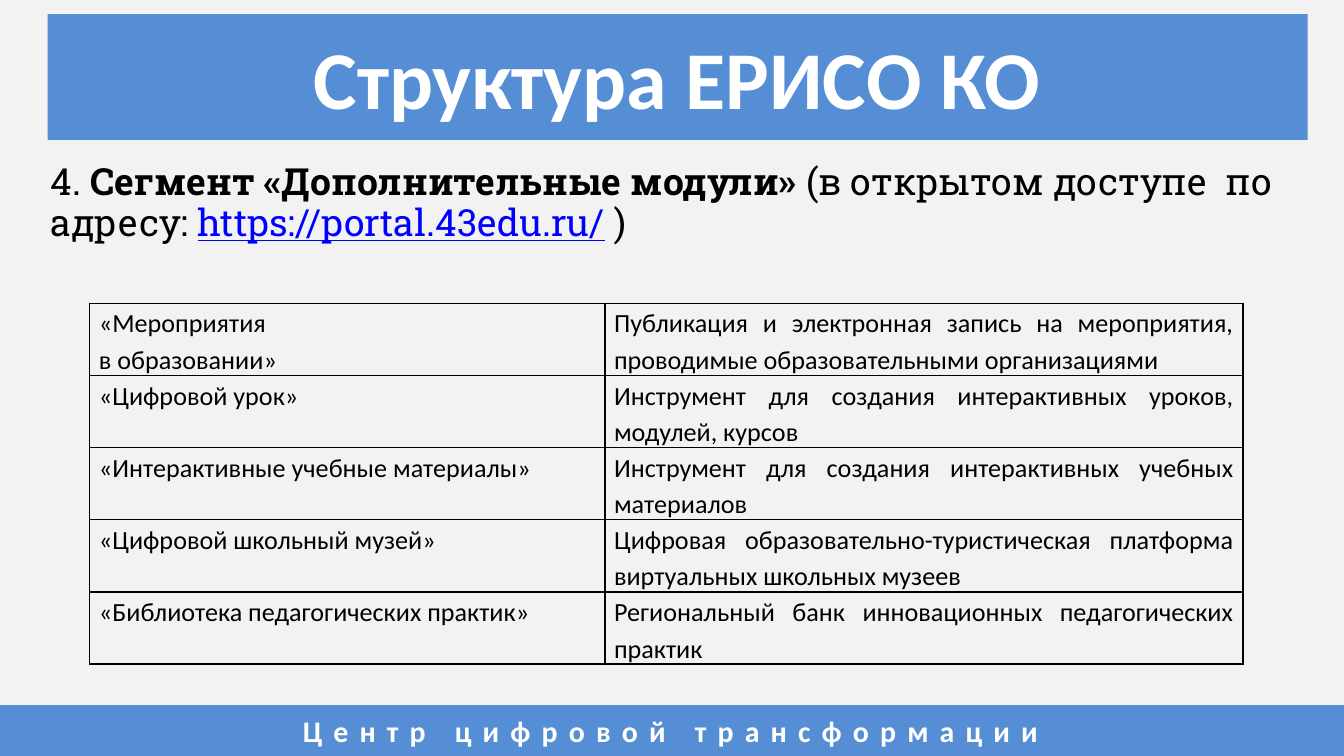
from lxml import etree
from pptx import Presentation
from pptx import util as u
from pptx.dml.color import RGBColor
from pptx.enum import shapes, text
from pptx.oxml.ns import qn

Pt = u.Pt
HUES = {"back": "F2F2F2", "band": "558ED5", "white": "FFFFFF", "ink": "000000", "link": "0000FF"}
ROWS = [
    (["«Мероприятия ", "в образовании»"],
     ["Публикация и электронная запись на мероприятия, проводимые образовательными организациями"]),
    (["«Цифровой урок»"],
     ["Инструмент для создания интерактивных уроков, модулей, курсов"]),
    (["«Интерактивные учебные материалы»"],
     ["Инструмент для создания интерактивных учебных материалов"]),
    (["«Цифровой школьный музей»"],
     ["Цифровая образовательно-туристическая платформа виртуальных школьных музеев"]),
    (["«Библиотека педагогических практик»"],
     ["Региональный банк инновационных педагогических практик"]),
]


def hue(name):
    """Return the named colour."""
    return RGBColor.from_string(HUES[name])


def paint(fill, name):
    """Give a fill one solid colour."""
    fill.solid()
    fill.fore_color.rgb = hue(name)


def add_run(para, words, size, color="ink", face="Calibri", bold=False, under=False):
    """Add one formatted run to a paragraph."""
    run = para.add_run()
    run.text = words
    font = run.font
    font.size, font.name, font.bold, font.underline = Pt(size), face, bold, under
    font.color.rgb = hue(color)
    return run


def add_foot(slide, x, y, w, h):
    """Draw the footer band with its spaced caption."""
    band = slide.shapes.add_shape(shapes.MSO_SHAPE.RECTANGLE, Pt(x), Pt(y), Pt(w), Pt(h))
    band.shadow.inherit = False
    paint(band.fill, "band")
    band.line.color.rgb = hue("band")
    band.line.width = Pt(0.75)
    frame = band.text_frame
    frame.vertical_anchor = text.MSO_ANCHOR.MIDDLE
    para = frame.paragraphs[0]
    para.alignment = text.PP_ALIGN.CENTER
    run = add_run(para, "Центр цифровой трансформации", 16, "white", bold=True)
    run.font._element.set("spc", "600")


def add_title(slide, x, y, w, h):
    """Place and format the title placeholder."""
    title = slide.shapes.title
    title.left, title.top, title.width, title.height = Pt(x), Pt(y), Pt(w), Pt(h)
    paint(title.fill, "band")
    frame = title.text_frame
    frame.vertical_anchor = text.MSO_ANCHOR.MIDDLE
    para = frame.paragraphs[0]
    para.alignment = text.PP_ALIGN.CENTER
    add_run(para, "Структура ЕРИСО КО", 44, "white", bold=True)


def add_lead(slide, x, y, w, h):
    """Write the lead paragraph with the portal address."""
    frame = slide.shapes.add_textbox(Pt(x), Pt(y), Pt(w), Pt(h)).text_frame
    frame.word_wrap = True
    para = frame.paragraphs[0]
    para.line_spacing = 0.92
    face = "Roboto Slab"
    add_run(para, "4. ", 20, face=face)
    add_run(para, "Сегмент «Дополнительные модули» ", 20, face=face, bold=True)
    add_run(para, "(в открытом доступе  по адресу: ", 20, face=face)
    add_run(para, "https://portal.43edu.ru/", 20, "link", face, under=True)
    add_run(para, " )", 20, face=face)


def edge(cell):
    """Rule all four sides of a cell."""
    props = cell._tc.get_or_add_tcPr()
    for spot, side in enumerate(("lnL", "lnR", "lnT", "lnB")):
        line = etree.Element(qn("a:" + side), w=str(Pt(1)))
        fill = etree.SubElement(line, qn("a:solidFill"))
        etree.SubElement(fill, qn("a:srgbClr"), val=HUES["ink"])
        props.insert(spot, line)


def fill_cell(cell, lines):
    """Write justified lines into a ruled, clear cell."""
    cell.fill.background()
    cell.margin_left = cell.margin_right = Pt(5)
    cell.margin_top = cell.margin_bottom = Pt(0)
    frame = cell.text_frame
    for spot, words in enumerate(lines):
        para = frame.add_paragraph() if spot else frame.paragraphs[0]
        para.alignment = text.PP_ALIGN.JUSTIFY
        para.line_spacing = 1.15
        add_run(para, words, 14)
    edge(cell)


def add_grid(slide, x, y, w, h):
    """Build the table of modules and their purposes."""
    grid = slide.shapes.add_table(len(ROWS), 2, Pt(x), Pt(y), Pt(w), Pt(h)).table
    grid.first_row = grid.horz_banding = False
    first = 276
    grid.columns[0].width, grid.columns[1].width = Pt(first), Pt(w - first)
    for row, pair in zip(grid.rows, ROWS):
        row.height = Pt(h / len(ROWS))
        for cell, lines in zip(row.cells, pair):
            fill_cell(cell, lines)


def main():
    """Build and save the slide."""
    deck = Presentation()
    deck.slide_width, deck.slide_height = Pt(720), Pt(405)
    slide = deck.slides.add_slide(deck.slide_layouts[5])
    paint(slide.background.fill, "back")
    add_foot(slide, -0.5, 378, 720, 27)
    add_title(slide, 25.5, 7.5, 675, 67.5)
    add_lead(slide, 20, 83.5, 680.5, 297.5)
    add_grid(slide, 48, 162.5, 618, 193)
    deck.save("out.pptx")


if __name__ == "__main__":
    main()
